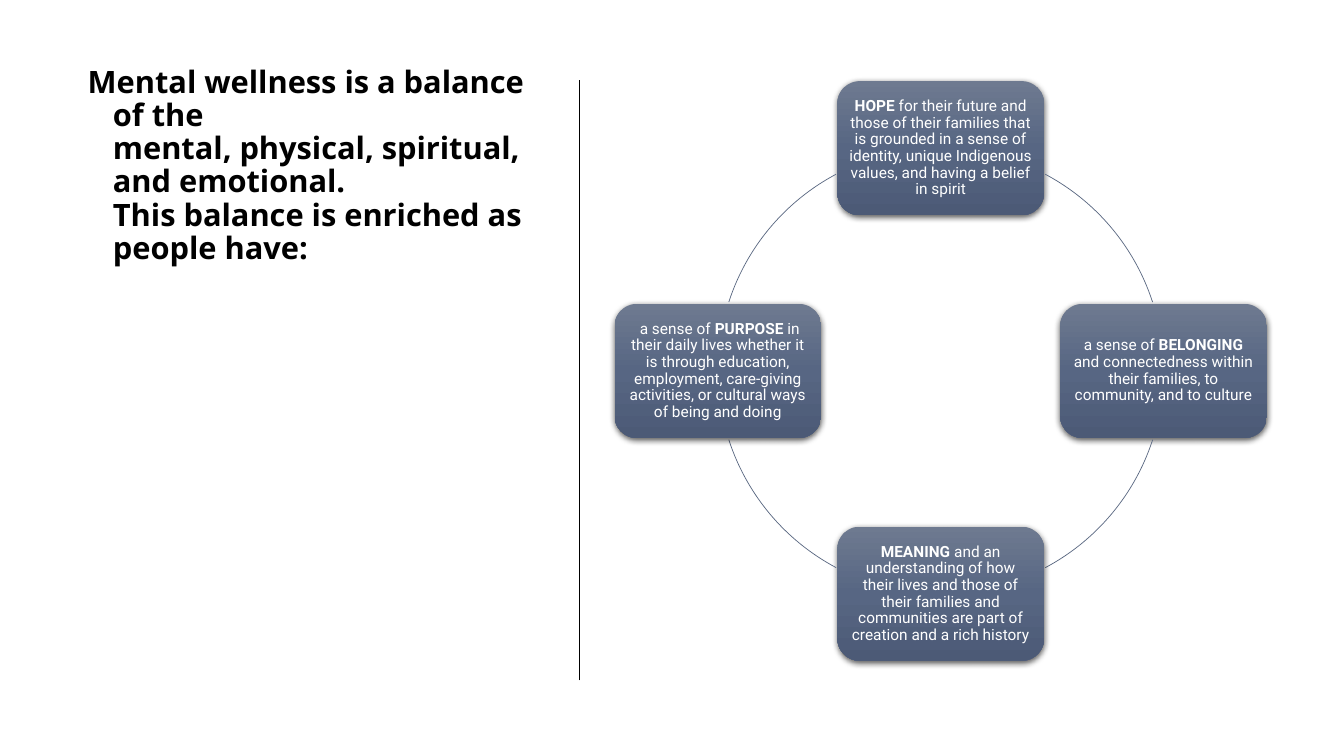
import math
from copy import deepcopy
from dataclasses import dataclass

from lxml import etree
from pptx import Presentation
from pptx.dml.color import RGBColor
from pptx.enum.shapes import MSO_CONNECTOR, MSO_SHAPE
from pptx.enum.text import MSO_ANCHOR, MSO_AUTO_SIZE, PP_ALIGN
from pptx.oxml.ns import qn
from pptx.util import Inches, Pt

ROUNDED, ARC = MSO_SHAPE.ROUNDED_RECTANGLE, MSO_SHAPE.ARC
STRAIGHT = MSO_CONNECTOR.STRAIGHT
TOP, MIDDLE = MSO_ANCHOR.TOP, MSO_ANCHOR.MIDDLE
LEFT, CENTER = PP_ALIGN.LEFT, PP_ALIGN.CENTER
NO_AUTOFIT = MSO_AUTO_SIZE.NONE


@dataclass(frozen=True)
class Theme:
    ink: RGBColor = RGBColor.from_string("000000")
    light: RGBColor = RGBColor.from_string("FFFFFF")
    ring: RGBColor = RGBColor.from_string("596781")
    gradient: tuple = ("6E7A90", "576683", "4C5A76")
    title_font: str = "Noto Sans"
    body_font: str = "Roboto"
    title_size: Pt = Pt(22)
    body_size: Pt = Pt(11)


theme = Theme()


def set_font(span, name, size, color, bold):
    span.font.name = name
    span.font.size = size
    span.font.bold = bold
    span.font.color.rgb = color


def add_soft_shadow(shape):
    shape.shadow.inherit = False
    effects = shape._element.spPr.find(qn("a:effectLst"))
    shadow = etree.SubElement(effects, qn("a:outerShdw"), blurRad=str(Pt(4.5)),
                              dist=str(Pt(1.5)), dir="5400000", algn="ctr", rotWithShape="0")
    color = etree.SubElement(shadow, qn("a:srgbClr"), val="000000")
    etree.SubElement(color, qn("a:alpha"), val="63000")


deck = Presentation()
deck.slide_width, deck.slide_height = Inches(13.33), Inches(7.5)
page = deck.slides.add_slide(deck.slide_layouts[5])

# Title with a hanging indent
title = page.shapes.title
title.left, title.top = Inches(0.77), Inches(0.61)
title.width, title.height = Inches(4.61), Inches(2.61)
frame = title.text_frame
frame.text = ("Mental wellness is a balance of the \v"
              "mental, physical, spiritual, and emotional.\v"
              "This balance is enriched as people have:\v")
frame.word_wrap = True
frame.auto_size = NO_AUTOFIT
frame.vertical_anchor = TOP
para = frame.paragraphs[0]
para.alignment = LEFT
para.line_spacing = 0.9
para._p.get_or_add_pPr().set("marL", str(Inches(0.25)))
para._p.get_or_add_pPr().set("indent", str(Inches(-0.25)))
for span in para.runs:
    set_font(span, theme.title_font, theme.title_size, theme.ink, True)

# Divider
divider = page.shapes.add_connector(STRAIGHT, Inches(5.75), Inches(6.75),
                                    Inches(5.75), Inches(0.79))
divider.line.color.rgb = theme.ink
divider.line.width = Pt(1)
etree.SubElement(divider._element.spPr, qn("a:effectLst"))

# Cycle of four boxes, clockwise from the top, each followed by an arc
center_x, center_y, radius = 9.33, 3.68, 2.21
box_width, box_height = 2.05, 1.33
arc_spans = [(298, 342), (18, 62), (118, 162), (198, 242)]
strengths = [
    ("", "HOPE", " for their future and those of their families that is grounded in "
     "a sense of identity, unique Indigenous values, and having a belief in spirit"),
    ("a sense of ", "BELONGING", " and connectedness within their families, "
     "to community, and to culture"),
    ("", "MEANING", " and an understanding of how their lives and those of their "
     "families and communities are part of creation and a rich history"),
    (" a sense of ", "PURPOSE", " in their daily lives whether it is through education, "
     "employment, care-giving activities, or cultural ways of being and doing"),
]
for index, (words, arc_span) in enumerate(zip(strengths, arc_spans)):
    angle = math.radians(90 * index - 90)
    box = page.shapes.add_shape(
        ROUNDED,
        Inches(center_x + radius * math.cos(angle) - box_width / 2),
        Inches(center_y + radius * math.sin(angle) - box_height / 2),
        Inches(box_width), Inches(box_height))
    box.line.fill.background()
    add_soft_shadow(box)

    # Three-stop gradient running downwards
    box.fill.gradient()
    box.fill.gradient_angle = 270
    stop_list = box._element.spPr.find(qn("a:gradFill")).find(qn("a:gsLst"))
    stop_list.append(deepcopy(stop_list[0]))
    for place, (stop, color) in enumerate(zip(box.fill.gradient_stops, theme.gradient)):
        stop.position = place / 2
        stop.color.rgb = RGBColor.from_string(color)

    # Wording with its key word in bold
    frame = box.text_frame
    frame.word_wrap = True
    frame.vertical_anchor = MIDDLE
    frame.margin_left = frame.margin_right = Inches(0.05)
    frame.margin_top = frame.margin_bottom = Inches(0.05)
    para = frame.paragraphs[0]
    para.alignment = CENTER
    para.line_spacing = 0.9
    for part in filter(None, words):
        span = para.add_run()
        span.text = part
        set_font(span, theme.body_font, theme.body_size, theme.light, part.isupper())

    # Arc leading to the next box
    arc = page.shapes.add_shape(ARC, Inches(center_x - radius), Inches(center_y - radius),
                                Inches(2 * radius), Inches(2 * radius))
    for end, degrees in enumerate(arc_span):
        arc.adjustments[end] = degrees * 0.6  # 60000 units a degree, scaled by 100000
    arc.fill.background()
    arc.line.color.rgb = theme.ring
    arc.line.width = Pt(0.5)
    arc.shadow.inherit = False

deck.save("out.pptx")
